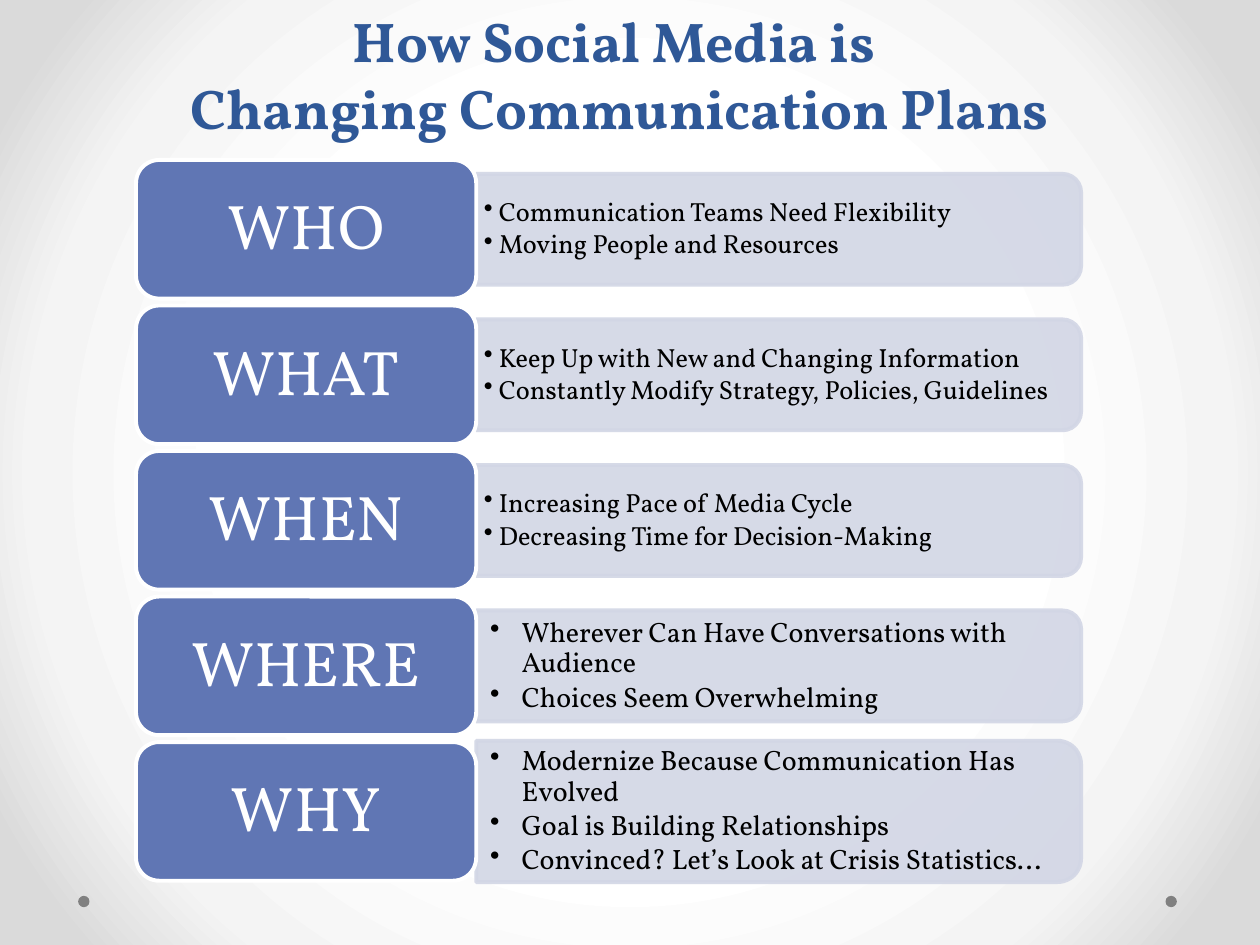
from dataclasses import dataclass

from lxml import etree
from pptx import Presentation
from pptx.dml.color import RGBColor
from pptx.enum.shapes import MSO_SHAPE
from pptx.enum.text import MSO_ANCHOR, MSO_AUTO_SIZE, PP_ALIGN
from pptx.oxml.ns import qn
from pptx.util import Inches, Pt

ROUNDED, ROUNDED_END, OVAL = (
    MSO_SHAPE.ROUNDED_RECTANGLE, MSO_SHAPE.ROUND_2_SAME_RECTANGLE, MSO_SHAPE.OVAL)
MIDDLE, BOTTOM = MSO_ANCHOR.MIDDLE, MSO_ANCHOR.BOTTOM
CENTER, LEFT = PP_ALIGN.CENTER, PP_ALIGN.LEFT
NO_AUTOFIT = MSO_AUTO_SIZE.NONE


@dataclass
class Theme:
    font: str = "Vollkorn"
    title: str = "2F5897"
    label: str = "6076B4"
    panel: str = "D2D6E5"
    white: str = "FFFFFF"
    black: str = "000000"
    dot: str = "808080"
    title_size: int = 32
    label_size: int = 36
    outline: float = 2.25
    backdrop: tuple = ((50, "FFFFFF"), (76, "F4F4F4"), (92, "DADADA"))


theme = Theme()


def add_box(kind, left, top, width, height, fill, line=None):
    """Add a flat preset shape, placed in inches."""
    shape = slide.shapes.add_shape(
        kind, Inches(left), Inches(top), Inches(width), Inches(height))
    shape.shadow.inherit = False
    shape.fill.solid()
    shape.fill.fore_color.rgb = RGBColor.from_string(fill)
    if line:
        shape.line.color.rgb = RGBColor.from_string(line)
        shape.line.width = Pt(theme.outline)
    else:
        shape.line.fill.background()
    return shape


def style(para, size, color, align, bold=False):
    """Format a paragraph and its runs."""
    para.alignment = align
    for run in para.runs:
        run.font.name = theme.font
        run.font.size = Pt(size)
        run.font.bold = bold
        run.font.color.rgb = RGBColor.from_string(color)


deck = Presentation()
deck.slide_width, deck.slide_height = Inches(10), Inches(7.5)
slide = deck.slides.add_slide(deck.slide_layouts[5])

# Background: circular gradient from the centre
slide.background.fill.gradient()
gradient = slide.element.find(".//" + qn("a:gradFill"))
for child in list(gradient):
    gradient.remove(child)
stops = etree.SubElement(gradient, qn("a:gsLst"))
for share, color in theme.backdrop:
    stop = etree.SubElement(stops, qn("a:gs"), pos=str(share * 1000))
    etree.SubElement(stop, qn("a:srgbClr"), val=color)
circle = etree.SubElement(gradient, qn("a:path"), path="circle")
etree.SubElement(circle, qn("a:fillToRect"), l="50000", t="50000", r="50000", b="50000")

# Corner dots
for left in (0.62, 9.25):
    add_box(OVAL, left, 7.11, 0.09, 0.09, theme.dot)

# Title
title = slide.shapes.title
title.left, title.top, title.width, title.height = (
    Inches(0.42), Inches(0.17), Inches(9), Inches(1))
title.text_frame.text = "How Social Media is \vChanging Communication Plans"
title.text_frame.vertical_anchor = BOTTOM
title.text_frame.auto_size = NO_AUTOFIT
style(title.text_frame.paragraphs[0], theme.title_size, theme.title, CENTER, bold=True)

# Rows: label, bullet size, hanging indent, left and right inset, panel share, bullets
compact = (15, 0.12, 0.06, 0.06, 0.8)
roomy = (16, 0.25, 0.11, 0.17)
rows = [
    ("WHO", *compact, ["Communication Teams Need Flexibility",
                       "Moving People and Resources"]),
    ("WHAT", *compact, ["Keep Up with New and Changing Information",
                        "Constantly Modify Strategy, Policies, Guidelines"]),
    ("WHEN", *compact, ["Increasing Pace of Media Cycle",
                        "Decreasing Time for Decision-Making"]),
    ("WHERE", *roomy, 0.8, ["Wherever Can Have Conversations with Audience",
                            "Choices Seem Overwhelming"]),
    ("WHY", *roomy, 1.02, ["Modernize Because Communication Has Evolved",
                           "Goal is Building Relationships",
                           "Convinced? Let’s Look at Crisis Statistics..."]),
]

# Grid of two columns and five rows
grid_left, grid_top = 1.08, 1.27
label_width, label_height, panel_width = 2.7, 1.1, 4.8
row_pitch = label_height * 1.05
panel_left = grid_left + label_width

for index, (name, size, indent, inset_left, inset_right, share, bullets) in enumerate(rows):
    top = grid_top + index * row_pitch
    middle = top + label_height / 2
    panel_height = label_height * share

    # Panel: turned a quarter so that its round corners face right
    panel = add_box(ROUNDED_END, panel_left + (panel_width - panel_height) / 2,
                    middle - panel_width / 2, panel_height, panel_width,
                    theme.panel, theme.panel)
    panel.rotation = 90
    for color in panel.element.spPr.iter(qn("a:srgbClr")):
        etree.SubElement(color, qn("a:alpha"), val="90000")

    # Bullets
    box = slide.shapes.add_textbox(
        Inches(panel_left), Inches(middle - panel_height / 2),
        Inches(panel_width), Inches(panel_height))
    frame = box.text_frame
    frame.word_wrap = True
    frame.vertical_anchor = MIDDLE
    frame.margin_left, frame.margin_right = Inches(inset_left), Inches(inset_right)
    frame.margin_top = frame.margin_bottom = Inches(0.03)
    frame.text = "\n".join(bullets)
    for para in frame.paragraphs:
        properties = para._p.get_or_add_pPr()
        properties.set("marL", str(Inches(indent)))
        properties.set("indent", str(-Inches(indent)))
        etree.SubElement(properties, qn("a:buChar"), char="•")
        para.level = 1
        para.line_spacing = 0.9
        para.space_after = Pt(size * 0.15)
        style(para, size, theme.black, LEFT)

    # Label
    label = add_box(ROUNDED, grid_left, top, label_width, label_height,
                    theme.label, theme.white)
    label.text_frame.text = name
    label.text_frame.vertical_anchor = MIDDLE
    label.text_frame.paragraphs[0].line_spacing = 0.9
    style(label.text_frame.paragraphs[0], theme.label_size, theme.white, CENTER)

deck.save("out.pptx")
